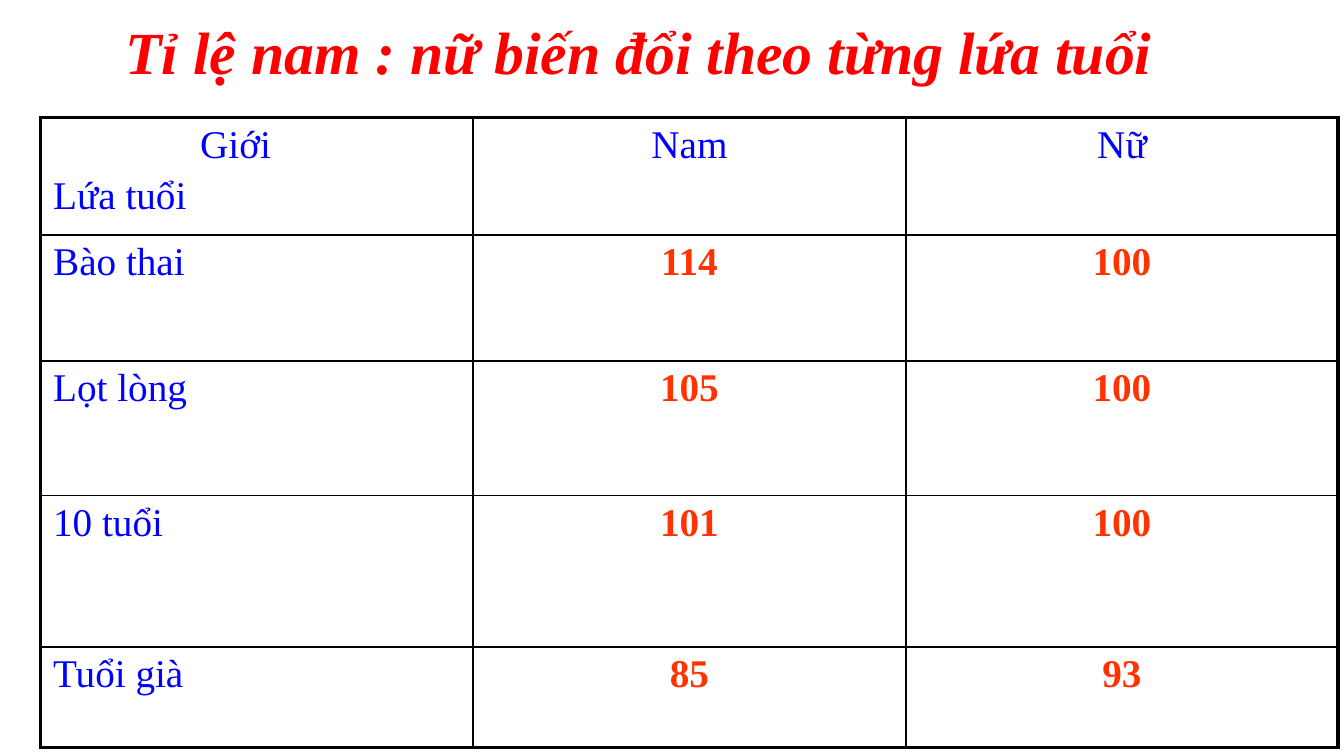
"""Build a slide with a table of male to female ratios by age group."""
import lxml.etree
import pptx
import pptx.dml.color
import pptx.enum.text
import pptx.oxml.ns
import pptx.util

PX = 9525
THEME = {
    "font": "Times New Roman",
    "title": "FF0000",
    "label": "0000FF",
    "value": "FF3300",
    "border": "000000",
    "title_size": 32,
    "cell_size": 21,
    "outer": 2.25,
    "inner": 1,
}
ALIGN = pptx.enum.text.PP_ALIGN
ROWS = [
    ("Giới\nLứa tuổi", "Nam", "Nữ"),
    ("Bào thai", "114", "100"),
    ("Lọt lòng", "105", "100"),
    ("10 tuổi", "101", "100"),
    ("Tuổi già", "85", "93"),
]
ROW_HEIGHTS = [84, 90, 96, 108, 72]
COL_WIDTH = 309
COLS = len(ROWS[0])


def style(p, size, color, bold, italic=False):
    for r in p.runs:
        r.font.name = THEME["font"]
        r.font.size = pptx.util.Pt(size)
        r.font.bold = bold
        r.font.italic = italic
        r.font.color.rgb = pptx.dml.color.RGBColor.from_string(color)


def add_border(cell, side, width):
    qn = pptx.oxml.ns.qn
    tc_pr = cell._tc.get_or_add_tcPr()
    ln = lxml.etree.SubElement(tc_pr, qn(f"a:ln{side}"), w=str(pptx.util.Pt(width)))
    fill = lxml.etree.SubElement(ln, qn("a:solidFill"))
    lxml.etree.SubElement(fill, qn("a:srgbClr"), val=THEME["border"])


prs = pptx.Presentation()
prs.slide_width = 960 * PX
prs.slide_height = 540 * PX
s = prs.slides.add_slide(prs.slide_layouts[6])

frame = s.shapes.add_table(len(ROWS), COLS, 29 * PX, 84 * PX,
                           COLS * COL_WIDTH * PX, sum(ROW_HEIGHTS) * PX)
table = frame.table
table.first_row = False
table.horz_banding = False
for col in table.columns:
    col.width = COL_WIDTH * PX
for row, height in zip(table.rows, ROW_HEIGHTS):
    row.height = height * PX

for i, texts in enumerate(ROWS):
    for j, text in enumerate(texts):
        cell = table.cell(i, j)
        cell.margin_left = cell.margin_right = 9 * PX
        cell.margin_top = cell.margin_bottom = 4 * PX
        edges = {"L": j == 0, "R": j == COLS - 1, "T": i == 0, "B": i == len(ROWS) - 1}
        for side, is_outer in edges.items():
            add_border(cell, side, THEME["outer" if is_outer else "inner"])
        cell.fill.background()
        cell.text_frame.text = text
        is_value = i > 0 and j > 0
        for p in cell.text_frame.paragraphs:
            p.alignment = ALIGN.CENTER if j else ALIGN.LEFT
            style(p, THEME["cell_size"], THEME["value" if is_value else "label"], is_value)

corner = table.cell(0, 0).text_frame.paragraphs
corner[0]._p.get_or_add_pPr().set("marL", str(105 * PX))
corner[1].space_before = pptx.util.Pt(4)

sp = s.shapes.add_textbox(80 * PX, 6 * PX, 840 * PX, 61 * PX)
tf = sp.text_frame
tf.word_wrap = True
tf.auto_size = pptx.enum.text.MSO_AUTO_SIZE.SHAPE_TO_FIT_TEXT
tf.text = "Tỉ lệ nam : nữ biến đổi theo từng lứa tuổi"
p = tf.paragraphs[0]
p.alignment = ALIGN.JUSTIFY
style(p, THEME["title_size"], THEME["title"], True, True)

prs.save("out.pptx")
